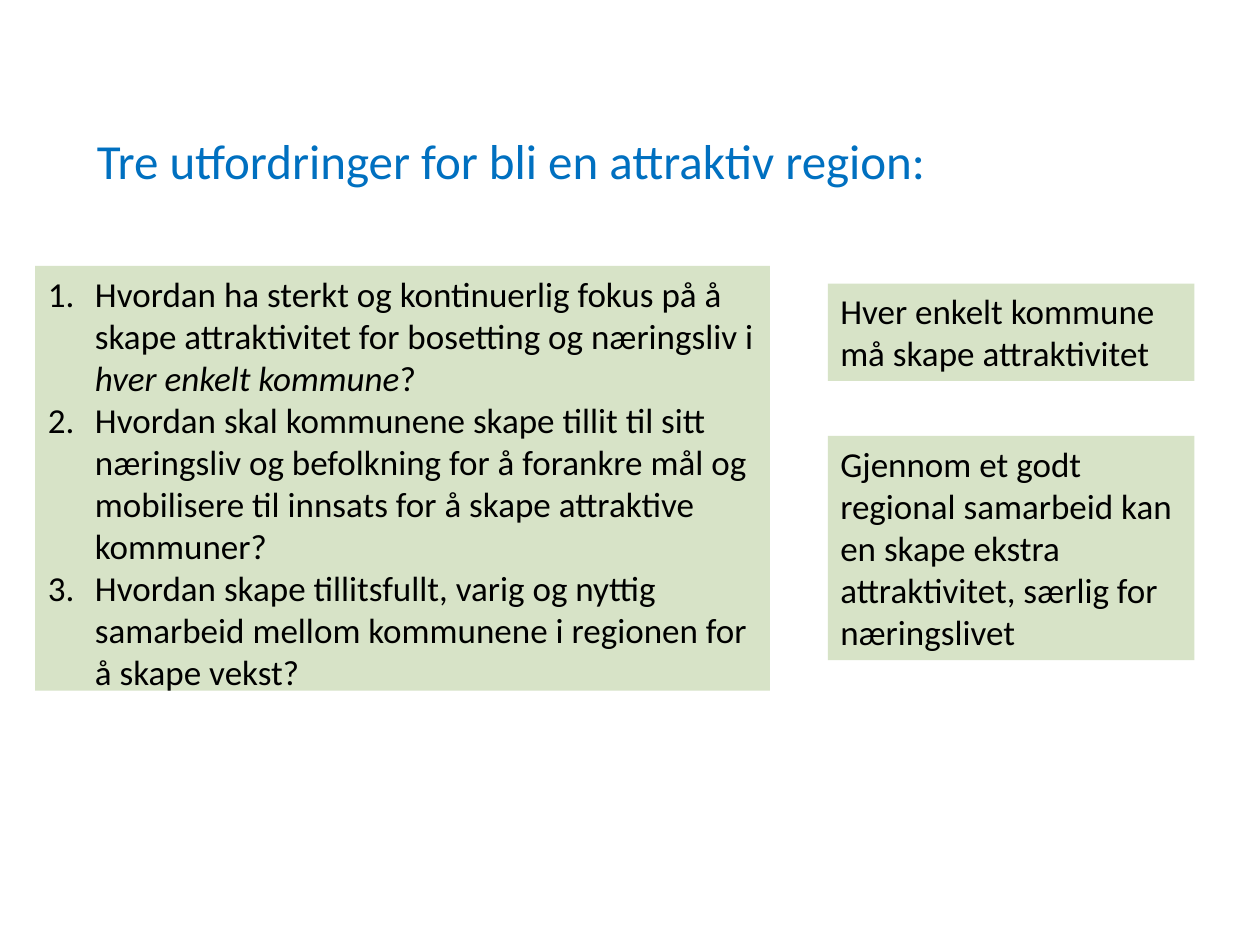
from dataclasses import dataclass

from lxml.etree import SubElement
from pptx import Presentation
from pptx.dml.color import RGBColor
from pptx.enum.text import MSO_ANCHOR as Anchor, MSO_AUTO_SIZE as AutoSize, PP_ALIGN as Align
from pptx.oxml.ns import qn
from pptx.util import Cm, Pt


@dataclass(frozen=True)
class Theme:
    """Colours, font and type sizes of the slide."""
    font: str = "Calibri"
    heading: RGBColor = RGBColor(0x00, 0x70, 0xC0)
    text: RGBColor = RGBColor(0x00, 0x00, 0x00)
    panel: RGBColor = RGBColor(0xD7, 0xE3, 0xC7)
    title_size: Pt = Pt(28)
    body_size: Pt = Pt(20)


class SlideBuilder:
    """Adds themed elements to one slide."""

    def __init__(self, slide, theme):
        """Keep the slide and its theme."""
        self.slide = slide
        self.theme = theme

    def place(self, shape, left, top, width, height):
        """Move a shape to a box in centimetres and prepare its text frame."""
        shape.left, shape.top = Cm(left), Cm(top)
        shape.width, shape.height = Cm(width), Cm(height)
        frame = shape.text_frame
        frame.word_wrap = True
        frame.auto_size = AutoSize.SHAPE_TO_FIT_TEXT
        frame.vertical_anchor = Anchor.TOP
        return frame

    def fill_panel(self, shape):
        """Give a shape the panel colour."""
        shape.fill.solid()
        shape.fill.fore_color.rgb = self.theme.panel

    def add_runs(self, paragraph, runs, size, color):
        """Add (text, italic) runs to a left-aligned paragraph."""
        paragraph.alignment = Align.LEFT
        paragraph.space_before = Pt(0)
        for text, italic in runs:
            run = paragraph.add_run()
            run.text = text
            run.font.name = self.theme.font
            run.font.size = size
            run.font.italic = italic
            run.font.color.rgb = color

    def title(self, text, *box):
        """Fill the title placeholder."""
        frame = self.place(self.slide.shapes.title, *box)
        self.add_runs(frame.paragraphs[0], [(text, False)], self.theme.title_size, self.theme.heading)

    def numbered_list(self, items, *box):
        """Fill the body placeholder with a numbered list on a panel."""
        shape = self.slide.placeholders[1]
        self.fill_panel(shape)
        frame = self.place(shape, *box)
        indent = Cm(0.95)
        for index, runs in enumerate(items):
            paragraph = frame.add_paragraph() if index else frame.paragraphs[0]
            properties = paragraph._p.get_or_add_pPr()
            properties.set("marL", str(indent))
            properties.set("indent", str(-indent))
            SubElement(properties, qn("a:buFont"), typeface="+mj-lt")
            SubElement(properties, qn("a:buAutoNum"), type="arabicPeriod")
            self.add_runs(paragraph, runs, self.theme.body_size, self.theme.text)

    def note(self, text, *box):
        """Add a text box on a panel."""
        shape = self.slide.shapes.add_textbox(0, 0, 0, 0)
        self.fill_panel(shape)
        frame = self.place(shape, *box)
        self.add_runs(frame.paragraphs[0], [(text, False)], self.theme.body_size, self.theme.text)


def main():
    """Build and save the presentation."""
    presentation = Presentation()
    presentation.slide_width, presentation.slide_height = Cm(25.4), Cm(19.05)
    slide = presentation.slides.add_slide(presentation.slide_layouts[1])
    builder = SlideBuilder(slide, Theme())

    challenges = [
        [
            ("Hvordan ha sterkt og kontinuerlig fokus på å skape attraktivitet "
             "for bosetting og næringsliv i ", False),
            ("hver enkelt kommune", True),
            ("?", False),
        ],
        [("Hvordan skal kommunene skape tillit til sitt næringsliv og befolkning for å "
          "forankre mål og mobilisere til innsats for å skape attraktive kommuner?", False)],
        [("Hvordan skape tillitsfullt, varig og nyttig samarbeid mellom kommunene "
          "i regionen for å skape vekst?", False)],
    ]
    notes = [
        ("Hver enkelt kommune må skape attraktivitet", 5.72, 1.96),
        ("Gjennom et godt regional samarbeid kan en skape ekstra attraktivitet, "
         "særlig for næringslivet", 8.79, 4.52),
    ]

    builder.title("Tre utfordringer for bli en attraktiv region:", 1.7, 2.51, 20.8, 1.45)
    builder.numbered_list(challenges, 0.71, 5.36, 14.81, 8.81)
    for text, top, height in notes:
        builder.note(text, 16.69, top, 7.39, height)

    presentation.save("out.pptx")


if __name__ == "__main__":
    main()
